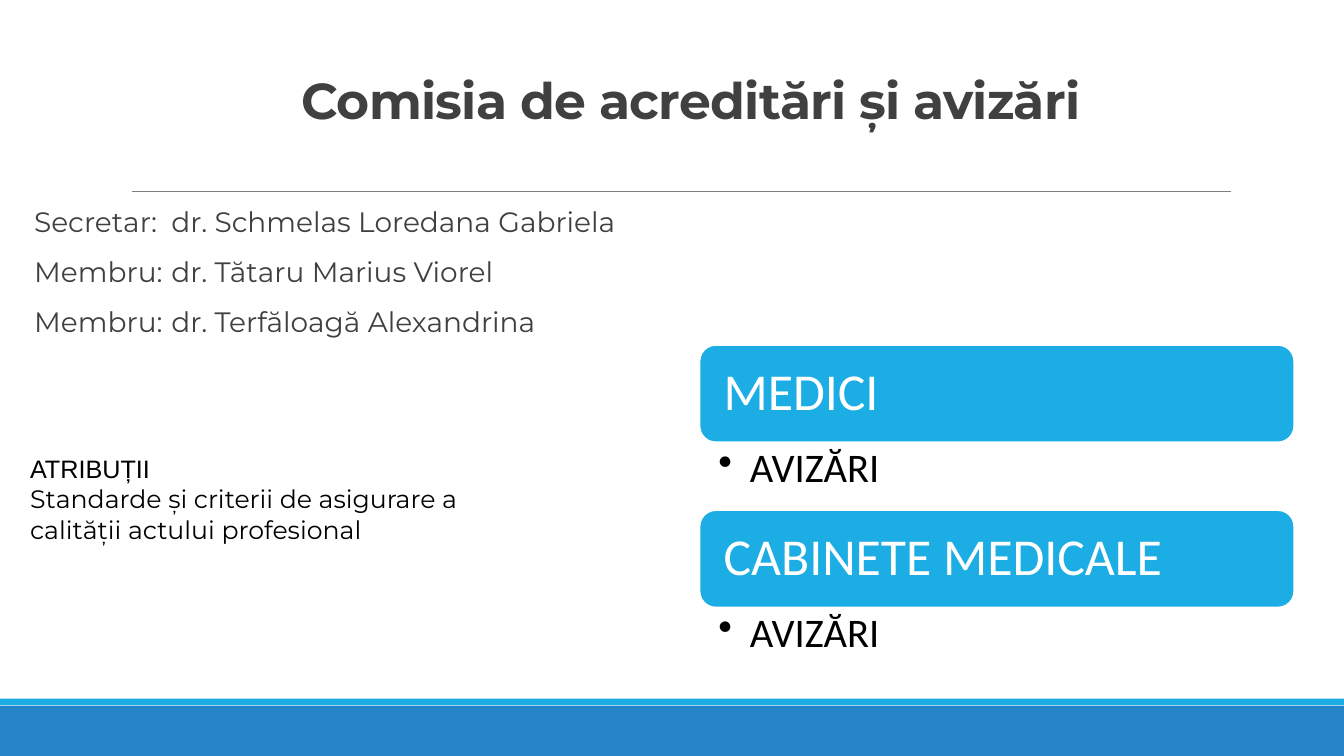
from lxml import etree
from pptx import Presentation
from pptx.dml.color import RGBColor
from pptx.enum import shapes, text
from pptx.oxml.ns import qn
from pptx.util import Pt

WIDE, HIGH = 960, 540
BLUE, SKY, GREY, INK = "2683C6", "1CADE4", "808080", "404040"
TEAM = [
    ("Secretar:", "dr. Schmelas Loredana Gabriela"),
    ("Membru:", "dr. Tătaru Marius Viorel"),
    ("Membru:", "dr. Terfăloagă Alexandrina"),
]
TASKS = [
    ("ATRIBUȚII", "Arial"),
    ("Standarde și criterii de asigurare a", "Montserrat"),
    ("calității actului profesional", "Montserrat"),
]
GROUPS = [("MEDICI", "AVIZĂRI"), ("CABINETE MEDICALE", "AVIZĂRI")]


def paint(part, color):
    """Give a fill or a font a solid colour."""
    if hasattr(part, "solid"):
        part.solid()
        part.fore_color.rgb = RGBColor.from_string(color)
    else:
        part.color.rgb = RGBColor.from_string(color)


def style(para, face, size, color, space=None):
    """Set the font and line spacing of a paragraph."""
    font = para.font
    font.name, font.size = face, Pt(size)
    paint(font, color)
    para.line_spacing = space


def hang(para, indent, mark):
    """Hang a paragraph on a bullet mark."""
    props = para._p.get_or_add_pPr()
    props.set("marL", str(Pt(indent)))
    props.set("indent", str(-Pt(indent)))
    etree.SubElement(props, qn("a:buChar")).set("char", mark)


def frame(shape, left=7.2, top=3.6, right=7.2, anchor=text.MSO_ANCHOR.TOP):
    """Set the margins, wrap and anchor of a shape's text."""
    body = shape.text_frame
    body.word_wrap = True
    body.auto_size = text.MSO_AUTO_SIZE.NONE
    body.margin_left, body.margin_right = Pt(left), Pt(right)
    body.margin_top = body.margin_bottom = Pt(top)
    body.vertical_anchor = anchor
    return body


def block(slide, kind, box, color):
    """Add a filled shape without line or shadow."""
    shape = slide.shapes.add_shape(kind, *map(Pt, box))
    shape.shadow.inherit = False
    paint(shape.fill, color)
    shape.line.fill.background()
    return shape


def footer(slide, box):
    """Draw the two-tone band at the foot."""
    left, top, width, height = box
    rect = shapes.MSO_SHAPE.RECTANGLE
    block(slide, rect, (left, top + 5, width, height - 5), BLUE)
    block(slide, rect, (left, top, width, 4.7), SKY)


def header(slide, box):
    """Place the title and the rule below it."""
    left, top, width, height = box
    title = slide.shapes.title
    title.left, title.top = Pt(left), Pt(top)
    title.width, title.height = Pt(width), Pt(height)
    body = frame(title, anchor=text.MSO_ANCHOR.BOTTOM)
    body.text = "Comisia de acreditări și avizări"
    para = body.paragraphs[0]
    style(para, "Montserrat", 36, INK, 0.85)
    para.font.bold = True
    para.alignment = text.PP_ALIGN.CENTER
    para.runs[0].font._element.set("spc", "-50")
    under = top + height + 40.3
    rule = slide.shapes.add_connector(
        shapes.MSO_CONNECTOR.STRAIGHT,
        Pt(left - 14.4), Pt(under), Pt(left + width + 0.7), Pt(under))
    paint(rule.line, GREY) if hasattr(rule.line, "solid") else paint(rule.line.fill, GREY)
    rule.line.width = Pt(0.5)
    etree.SubElement(rule._element.spPr, qn("a:effectLst"))


def team(slide, box):
    """List the members with their roles."""
    body = frame(slide.shapes.add_textbox(*map(Pt, box)), left=0, right=0)
    body.text = "\n".join("\t".join(row) for row in TEAM)
    for para in body.paragraphs:
        style(para, "Montserrat", 20, INK, 0.9)
        para.space_before, para.space_after = Pt(12), Pt(2)
        hang(para, 7.2, " ")


def tasks(slide, box):
    """Write the duties of the board."""
    body = frame(slide.shapes.add_textbox(*map(Pt, box)))
    body.text = "\n".join(line for line, _ in TASKS)
    for para, (_, face) in zip(body.paragraphs, TASKS):
        style(para, face, 18, "000000")


def groups(slide, box):
    """Stack a rounded heading and a bullet for each group."""
    left, top, width, height = box
    step = height / len(GROUPS)
    head = step * 0.59
    for row, (name, item) in enumerate(GROUPS):
        y = top + row * step
        card = block(slide, shapes.MSO_SHAPE.ROUNDED_RECTANGLE,
                     (left, y, width, head), SKY)
        paint(card.line.fill, "FFFFFF")
        card.line.width = Pt(1.25)
        note = slide.shapes.add_textbox(
            Pt(left), Pt(y + head), Pt(width), Pt(step - head))
        body = frame(card, 13.9, 10.8, 13.9, text.MSO_ANCHOR.MIDDLE)
        body.text = name
        style(body.paragraphs[0], "Calibri", 37, "FFFFFF", 0.9)
        body.paragraphs[0].alignment = text.PP_ALIGN.LEFT
        body = frame(note, 13.5, 3.6, 20.9)
        body.text = item
        style(body.paragraphs[0], "Calibri", 29, "000000", 0.9)
        hang(body.paragraphs[0], 22.5, "•")


def main():
    """Build and save the slide."""
    deck = Presentation()
    deck.slide_width, deck.slide_height = Pt(WIDE), Pt(HIGH)
    slide = deck.slides.add_slide(deck.slide_layouts[5])
    footer(slide, (0, 499, WIDE, 41))
    header(slide, (108.7, 22.3, 769.7, 74.2))
    team(slide, (14.4, 145.4, 931.7, 316.8))
    groups(slide, (499.7, 246.4, 424.8, 236))
    tasks(slide, (14.4, 320.4, 550, 72.7))
    deck.save("out.pptx")


if __name__ == "__main__":
    main()
